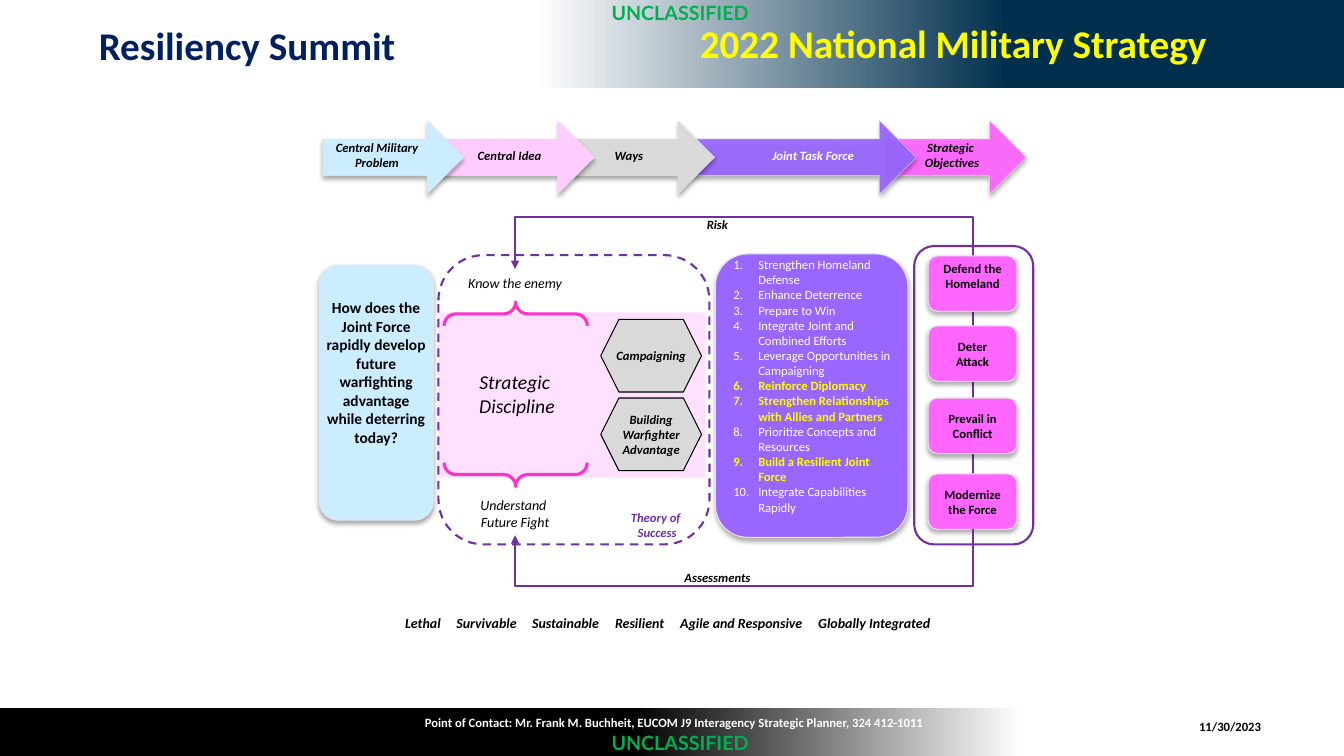
from dataclasses import dataclass

from lxml import etree
from pptx import Presentation
from pptx import util as u
from pptx.dml.color import RGBColor
from pptx.enum import dml, shapes, text
from pptx.oxml.ns import qn

COLORS = {
    "white": "FFFFFF", "black": "000000", "banner": "002F4D", "navy": "002060",
    "yellow": "FFFF00", "marking": "00B050", "outline": "7030A0", "edge": "E7E6E6",
    "blue": "CCECFF", "pink": "FFCCFF", "gray": "D9D9D9", "purple": "9966FF",
    "magenta": "FF66FF", "brace": "FF33CC",
}
SHAPE = shapes.MSO_SHAPE
ALIGN = text.PP_ALIGN
ANCHOR = text.MSO_ANCHOR


@dataclass
class Box:
    """Left, top, width and height in centimetres."""
    left: float
    top: float
    width: float
    height: float

    def inside(self, left, top, width, height):
        return Box(self.left + left, self.top + top, width, height)

    def around(self, x, y, width=3, height=1.02):
        return self.inside(x - width / 2, y - height / 2, width, height)

    def lengths(self):
        return [u.Cm(n) for n in (self.left, self.top, self.width, self.height)]


def color(name):
    return RGBColor.from_string(COLORS[name])


def add_child(parent, tag, **attributes):
    return etree.SubElement(parent, qn(tag), {key: str(value) for key, value in attributes.items()})


def add_shape(slide, kind, box, fill=None, line=None, weight=0.75, alpha=None, shadow=False):
    shape = slide.shapes.add_shape(kind, *box.lengths())
    shape.shadow.inherit = False
    if fill:
        shape.fill.solid()
        shape.fill.fore_color.rgb = color(fill)
    else:
        shape.fill.background()
    if alpha:
        add_child(shape.element.spPr.find(".//" + qn("a:srgbClr")), "a:alpha", val=alpha * 1000)
    if line:
        shape.line.color.rgb = color(line)
        shape.line.width = u.Pt(weight)
    else:
        shape.line.fill.background()
    if shadow:
        effects = shape.element.spPr.find(qn("a:effectLst"))
        outer = add_child(effects, "a:outerShdw", blurRad=u.Pt(3.5), dist=u.Pt(2.2),
                          dir=90 * 60000, algn="t", rotWithShape=0)
        add_child(add_child(outer, "a:srgbClr", val=COLORS["black"]), "a:alpha", val=32000)
    return shape


def write(frame, lines, size=9, ink="black", bold=True, italic=False, align=ALIGN.CENTER,
          anchor=ANCHOR.MIDDLE, wrap=False, font="Calibri"):
    frame.word_wrap = wrap
    frame.auto_size = text.MSO_AUTO_SIZE.NONE
    frame.vertical_anchor = anchor
    for index, line in enumerate(lines):
        paragraph = frame.add_paragraph() if index else frame.paragraphs[0]
        paragraph.alignment = align
        run = paragraph.add_run()
        run.text = line
        run.font.name = font
        run.font.size = u.Pt(size)
        run.font.bold, run.font.italic = bold, italic
        run.font.color.rgb = color(ink)
    return frame


def add_text(slide, box, *lines, **style):
    return write(slide.shapes.add_textbox(*box.lengths()).text_frame, lines, **style)


def add_gradient_band(slide, box, stops, angle):
    band = add_shape(slide, SHAPE.RECTANGLE, box)
    band.fill.gradient()
    band.fill.gradient_angle = angle
    for stop, (position, name) in zip(band.fill.gradient_stops, stops):
        stop.position = position
        stop.color.rgb = color(name)


def add_marking(slide, box):
    frame = add_text(slide, box, "UNCLASSIFIED", size=14, ink="marking", font="Lato",
                     align=ALIGN.RIGHT, anchor=ANCHOR.TOP)
    frame.margin_left = frame.margin_right = frame.margin_top = frame.margin_bottom = u.Cm(0.13)
    frame.paragraphs[0].line_spacing = 0.9


def add_banner(slide, box):
    add_gradient_band(slide, box, [(0.4, "white"), (0.75, "banner")], 0)
    add_text(slide, box.inside(2.24, 0.41, 14.73, 1.45), "Resiliency Summit", size=28,
             ink="navy", align=ALIGN.LEFT, anchor=ANCHOR.TOP, wrap=True)
    title = slide.shapes.title
    title.left, title.top, title.width, title.height = box.inside(16.94, 0.36, 13.72, 1.45).lengths()
    write(title.text_frame, ["2022 National Military Strategy"], size=28, ink="yellow",
          align=ALIGN.RIGHT, anchor=ANCHOR.TOP, wrap=True)
    slide.shapes.element.append(title.element)  # bring the title in front of the band
    add_marking(slide, box.inside(14.94, -0.03, 4.06, 0.79))


def add_footer(slide, box):
    add_gradient_band(slide, box, [(0.24, "white"), (0.53, "black")], 180)
    add_text(slide, box.inside(28.14, 0.1, 5.72, 0.76), "11/30/2023", wrap=True)
    add_text(slide, box.inside(7.11, 0, 19.74, 0.76),
             "Point of Contact: Mr. Frank M. Buchheit, EUCOM J9 Interagency Strategic Planner, "
             "324 412-1011", ink="white", wrap=True)
    add_marking(slide, box.inside(14.94, 0.53, 4.06, 0.79))


def add_arrow_chain(slide, box):
    # Left, width, label centre, fill, opacity, label ink, label; last arrow lies at the back
    arrows = [
        (14.17, 3.56, 15.86, "magenta", 94, "black", ["Strategic ", "Objectives"]),
        (9.02, 5.94, 12.36, "purple", 92, "white", ["Joint Task Force"]),
        (6.32, 3.56, 7.72, "gray", None, "black", ["Ways"]),
        (2.89, 3.96, 4.71, "pink", None, "black", ["Central Idea"]),
        (0, 3.56, 1.37, "blue", None, "black", ["Central Military", "Problem"]),
    ]
    for left, width, center, fill, alpha, ink, lines in arrows:
        add_shape(slide, SHAPE.RIGHT_ARROW, box.inside(left, 0, width, box.height), fill,
                  "edge", 0.25, alpha, shadow=True)
        add_text(slide, box.around(center, 0.87), *lines, ink=ink, italic=True)


def add_feedback_loop(slide, box, arrow_length, label, rising):
    """Runs from the right side along the far edge to an arrowhead on the left side."""
    bottom = box.top + box.height
    start, edge, inward = (bottom, box.top, 1) if rising else (box.top, bottom, -1)
    end = edge + inward * arrow_length
    length = abs(end - start)
    left, top = box.left + (box.width - length) / 2, (start + end - box.width) / 2
    connector = slide.shapes.add_connector(
        shapes.MSO_CONNECTOR.ELBOW, u.Cm(left), u.Cm(top), u.Cm(left + length), u.Cm(top + box.width))
    properties = connector.element.spPr
    frame = properties.find(qn("a:xfrm"))
    frame.set("rot", str((270 if rising else 90) * 60000))
    if rising:
        frame.set("flipV", "1")
    bend = round((edge - start) / (end - start) * 100000)
    geometry = properties.find(qn("a:prstGeom"))
    guides = geometry.find(qn("a:avLst"))
    if guides is None:
        guides = add_child(geometry, "a:avLst")
    add_child(guides, "a:gd", name="adj1", fmla=f"val {bend}")
    connector.line.color.rgb = color("outline")
    connector.line.width = u.Pt(1.5)
    add_child(properties.find(qn("a:ln")), "a:tailEnd", type="triangle")
    add_child(properties, "a:effectLst")
    add_text(slide, box.around(5.1, edge - box.top + inward * 0.2, height=0.64), label, italic=True)


def add_problem(slide, box):
    add_shape(slide, SHAPE.ROUNDED_RECTANGLE, box, "blue", "edge", shadow=True)
    add_text(slide, box.inside(-0.13, 0.71, 3.12, 4.95),
             "How does the Joint Force rapidly develop future warfighting advantage while "
             "deterring today?", size=11, anchor=ANCHOR.TOP, wrap=True)


def add_theory(slide, box):
    add_shape(slide, SHAPE.RECTANGLE, box.inside(0, 1.44, 6.73, 4.17), "pink", alpha=58)
    brace = add_shape(slide, SHAPE.DOUBLE_BRACE, box.inside(-0.38, 1.7, 4.65, 3.61),
                      line="brace", weight=2.25)
    brace.rotation = 90
    ideas = [(1.98, 3.49, 14, ["Strategic ", "Discipline"]), (1.93, 0.69, 10, ["Know the enemy"]),
             (1.93, 6.5, 10, ["Understand ", "Future Fight"])]
    for x, y, size, lines in ideas:
        add_text(slide, box.around(x, y), *lines, size=size, bold=False, italic=True)
    ways = [["Campaigning"], ["Building", "Warfighter", "Advantage"]]
    for index, lines in enumerate(ways):
        way = box.inside(4.09, 1.62 + 1.98 * index, 2.54, 1.83)
        add_shape(slide, SHAPE.HEXAGON, way, "gray", "black")
        add_text(slide, way, *lines, italic=True)
    frame = add_shape(slide, SHAPE.ROUNDED_RECTANGLE, box, line="outline", weight=1.5)
    frame.line.dash_style = dml.MSO_LINE.DASH
    add_text(slide, box.around(5.51, 6.8), "Theory of ", "Success", ink="outline", italic=True)


def add_task_list(slide, box):
    tasks = ["Strengthen Homeland Defense", "Enhance Deterrence", "Prepare to Win",
             "Integrate Joint and Combined Efforts", "Leverage Opportunities in Campaigning",
             "Reinforce Diplomacy", "Strengthen Relationships with Allies and Partners",
             "Prioritize Concepts and Resources", "Build a Resilient Joint Force",
             "Integrate Capabilities Rapidly"]
    add_shape(slide, SHAPE.ROUNDED_RECTANGLE, box, "purple", "edge", shadow=True)
    frame = add_text(slide, box.inside(0.2, -0.05, 4.62, 7.19), *tasks, ink="white", bold=False,
                     align=ALIGN.LEFT, anchor=ANCHOR.TOP, wrap=True)
    for number, paragraph in enumerate(frame.paragraphs, 1):
        properties = paragraph._p.get_or_add_pPr()
        properties.set("marL", str(u.Cm(0.63)))
        properties.set("indent", str(u.Cm(-0.63)))
        add_child(properties, "a:buFont", typeface="+mj-lt")
        add_child(properties, "a:buAutoNum", type="arabicPeriod")
        if number in (6, 7, 9):
            paragraph.runs[0].font.bold = True
            paragraph.runs[0].font.color.rgb = color("yellow")


def add_objectives(slide, box):
    objectives = [(0.25, ["Defend the Homeland"], ANCHOR.TOP), (2.01, ["Deter", "Attack"], ANCHOR.MIDDLE),
                  (3.83, ["Prevail in", "Conflict"], ANCHOR.MIDDLE),
                  (5.74, ["Modernize", "the Force"], ANCHOR.MIDDLE)]
    for top, lines, anchor in objectives:
        button = box.inside(0.35, top, 2.24, 1.4)
        add_shape(slide, SHAPE.ROUNDED_RECTANGLE, button, "magenta", "edge", shadow=True)
        add_text(slide, button, *lines, anchor=anchor, wrap=True)
    add_shape(slide, SHAPE.ROUNDED_RECTANGLE, box, line="outline", weight=1.5)


def add_attributes(slide, box):
    names = ["Lethal", "Survivable", "Sustainable", "Resilient", "Agile and Responsive",
             "Globally Integrated"]
    frame = add_text(slide, box, "\t".join(names), size=10, italic=True, align=ALIGN.LEFT, wrap=True)
    frame.margin_left = frame.margin_right = 0
    tabs = add_child(frame.paragraphs[0]._p.get_or_add_pPr(), "a:tabLst")
    for position in (1.29, 3.2, 5.29, 6.93, 10.41):
        add_child(tabs, "a:tab", pos=u.Cm(position), algn="l")


def main():
    presentation = Presentation()
    presentation.slide_width, presentation.slide_height = u.Cm(33.87), u.Cm(19.05)
    slide = presentation.slides.add_slide(presentation.slide_layouts[5])
    add_footer(slide, Box(0, 17.83, 33.87, 1.22))
    add_banner(slide, Box(0, 0, 33.87, 2.21))
    add_feedback_loop(slide, Box(12.98, 5.46, 11.53, 6.48), 1.32, "Risk", rising=True)
    add_arrow_chain(slide, Box(8.13, 3.04, 17.73, 1.85))
    add_problem(slide, Box(8.05, 6.68, 2.87, 6.43))
    add_theory(slide, Box(11.05, 6.43, 6.83, 7.29))
    add_task_list(slide, Box(18.03, 6.4, 4.85, 7.14))
    add_objectives(slide, Box(23.04, 6.2, 3, 7.52))
    add_feedback_loop(slide, Box(12.98, 13.34, 11.53, 1.42), 1.27, "Assessments", rising=False)
    add_attributes(slide, Box(10.21, 15.34, 14, 0.69))
    presentation.save("out.pptx")


if __name__ == "__main__":
    main()
